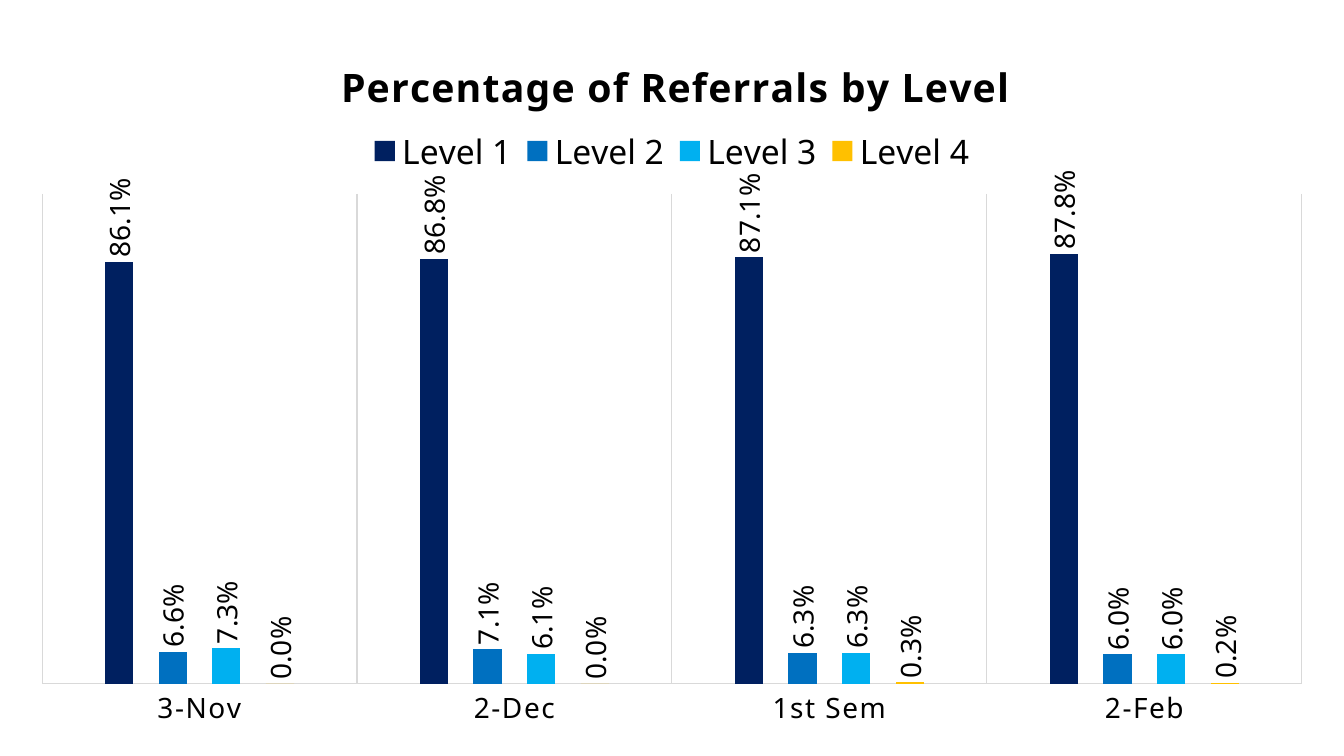
from pptx import Presentation
from pptx.chart.data import CategoryChartData
from pptx.dml.color import RGBColor
from pptx.enum.chart import XL_CHART_TYPE, XL_LABEL_POSITION, XL_LEGEND_POSITION, XL_TICK_MARK
from pptx.oxml import parse_xml
from pptx.oxml.ns import nsdecls, qn
from pptx.util import Pt

CLUSTERED = XL_CHART_TYPE.COLUMN_CLUSTERED
OUTSIDE_END = XL_LABEL_POSITION.OUTSIDE_END
LEGEND_TOP = XL_LEGEND_POSITION.TOP
NO_TICK = XL_TICK_MARK.NONE

PX = 914400 / 100.8
FONT = "Noto Sans"
PERCENT = "0.0%"
COLORS = {
    "text": "000000",
    "grid": "D9D9D9",
    "highlight": "FFFF00",
    "Level 1": "002060",
    "Level 2": "0070C0",
    "Level 3": "00B0F0",
    "Level 4": "FFC000",
}
PERIODS = ["3-Nov", "2-Dec", "1st Sem", "2-Feb"]
REFERRALS = {
    "Level 1": [0.861, 0.868, 0.871, 0.878],
    "Level 2": [0.066, 0.071, 0.063, 0.06],
    "Level 3": [0.073, 0.061, 0.063, 0.06],
    "Level 4": [0, 0, 0.003, 0.002],
}


def px(length):
    return round(length * PX)


def color(name):
    return RGBColor.from_string(COLORS[name])


def set_font(font, size, bold=False):
    font.name = FONT
    font.size = Pt(size)
    font.bold = bold
    font.color.rgb = color("text")


def style_line(line):
    line.color.rgb = color("grid")
    line.width = Pt(0.75)


def manual_layout(chart_size, left, top, width=None, height=None, inner=False):
    chart_width, chart_height = chart_size
    parts = ['<c:layoutTarget val="inner"/>'] if inner else []
    parts += ['<c:xMode val="edge"/>', '<c:yMode val="edge"/>']
    fractions = {"x": left / chart_width, "y": top / chart_height}
    if width:
        fractions.update(w=width / chart_width, h=height / chart_height)
    parts += [f'<c:{name} val="{value:.4f}"/>' for name, value in fractions.items()]
    return parse_xml(
        f'<c:layout {nsdecls("c")}><c:manualLayout>{"".join(parts)}</c:manualLayout></c:layout>'
    )


def place(parent, layout, following):
    for old in parent.findall(qn("c:layout")):
        parent.remove(old)
    for name in following:
        sibling = parent.find(qn(name))
        if sibling is not None:
            sibling.addprevious(layout)
            return
    parent.append(layout)


def highlight_label(label):
    fill = parse_xml(
        f'<c:spPr {nsdecls("c", "a")}><a:solidFill>'
        f'<a:srgbClr val="{COLORS["highlight"]}"/></a:solidFill></c:spPr>'
    )
    number_format = parse_xml(
        f'<c:numFmt {nsdecls("c")} formatCode="{PERCENT}" sourceLinked="0"/>'
    )
    index = label.find(qn("c:idx"))
    index.addnext(fill)
    index.addnext(number_format)


def style_series(series):
    series.format.fill.solid()
    series.format.fill.fore_color.rgb = color(series.name)
    series.invert_if_negative = False
    labels = series.data_labels
    labels.show_value = True
    labels.number_format = PERCENT
    labels.number_format_is_linked = False
    labels.position = OUTSIDE_END
    set_font(labels.font, 20)
    latest = series.points[len(PERIODS) - 1].data_label
    set_font(latest.font, 20)
    latest.position = OUTSIDE_END


def style_axes(chart):
    periods = chart.category_axis
    periods.major_tick_mark = NO_TICK
    periods.minor_tick_mark = NO_TICK
    periods.has_major_gridlines = True
    style_line(periods.major_gridlines.format.line)
    style_line(periods.format.line)
    set_font(periods.tick_labels.font, 20)

    shares = chart.value_axis
    shares.minimum_scale = 0
    shares.maximum_scale = 1
    shares.has_major_gridlines = False
    shares.tick_labels.number_format = PERCENT
    shares.tick_labels.number_format_is_linked = False
    shares.visible = False


def add_referral_chart(slide, left, top, width, height):
    data = CategoryChartData(number_format=PERCENT)
    data.categories = PERIODS
    for level, values in REFERRALS.items():
        data.add_series(level, values)
    box = [px(length) for length in (left, top, width, height)]
    chart = slide.shapes.add_chart(CLUSTERED, *box, data).chart
    set_font(chart.font, 10)

    chart.has_title = True
    title = chart.chart_title.text_frame
    title.text = "Percentage of Referrals by Level"
    set_font(title.paragraphs[0].font, 28, bold=True)
    chart.chart_title.include_in_layout = False

    chart.has_legend = True
    chart.legend.position = LEGEND_TOP
    chart.legend.include_in_layout = False
    set_font(chart.legend.font, 24)

    style_axes(chart)
    plot = chart.plots[0]
    plot.vary_by_categories = False
    plot.gap_width = 444
    plot.overlap = -90
    for series in plot.series:
        style_series(series)

    root = chart.element
    for label in root.iter(qn("c:dLbl")):
        highlight_label(label)
    for body in root.xpath(".//c:dLbls//a:bodyPr"):
        body.set("rot", "-5400000")
        body.set("vert", "horz")
    for properties in root.xpath(".//c:title//a:defRPr | .//c:catAx/c:txPr//a:defRPr"):
        properties.set("spc", "100")

    size = (width, height)
    place(root.xpath(".//c:title")[0], manual_layout(size, 317, 32), ["c:overlay"])
    place(
        root.xpath(".//c:legend")[0],
        manual_layout(size, 342, 111, 626, 46),
        ["c:overlay"],
    )
    place(
        root.xpath(".//c:plotArea")[0],
        manual_layout(size, 25, 177, 1260, 490, inner=True),
        ["c:barChart"],
    )


def main():
    presentation = Presentation()
    presentation.slide_width = px(1344)
    presentation.slide_height = px(756)
    slide = presentation.slides.add_slide(presentation.slide_layouts[6])
    add_referral_chart(slide, 17, 17, 1311, 725)
    presentation.save("out.pptx")


if __name__ == "__main__":
    main()
